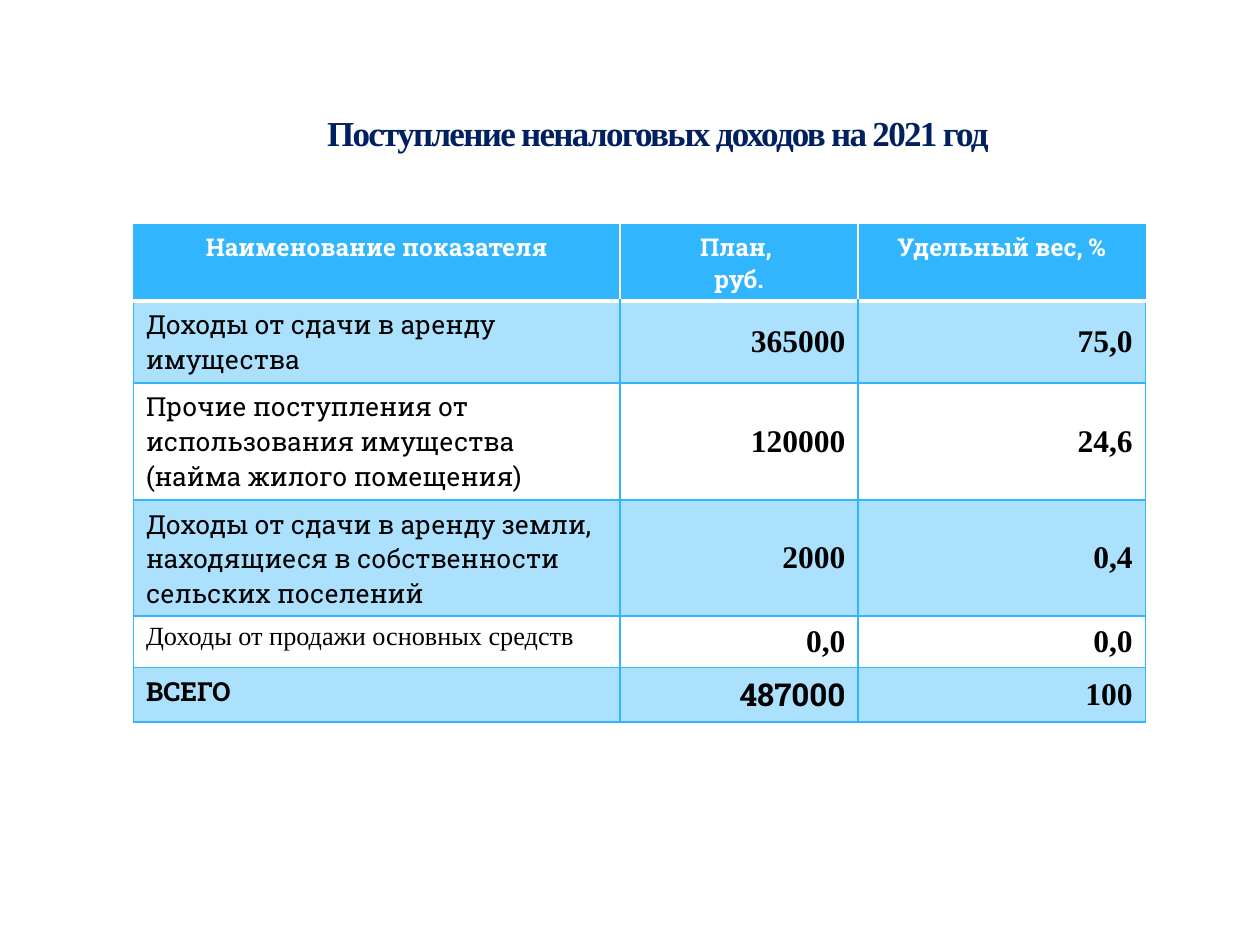
from lxml.etree import SubElement
from pptx import Presentation
from pptx.dml.color import RGBColor
from pptx.enum.text import MSO_ANCHOR, PP_ALIGN
from pptx.oxml.ns import qn
from pptx.util import Inches, Pt

BLUE = RGBColor(0x31, 0xB6, 0xFD)
NAVY = RGBColor(0x00, 0x20, 0x60)
WHITE = RGBColor(0xFF, 0xFF, 0xFF)
BLACK = RGBColor(0x00, 0x00, 0x00)
SLAB, TIMES = "Roboto Slab", "Times New Roman"

COLS = [3.86, 1.89, 2.28]
HEIGHTS = [0.61, 0.65, 0.93, 0.92, 0.41, 0.43]
HEAD = ["Наименование показателя", "План, \nруб.", "Удельный вес, %"]
# Label, plan, share, label font, plan font
ROWS = [
    ("Доходы от сдачи в аренду имущества", "365000", "75,0", SLAB, TIMES),
    ("Прочие поступления от использования имущества (найма жилого помещения)",
     "120000", "24,6", SLAB, TIMES),
    ("Доходы от сдачи в аренду земли, находящиеся в собственности сельских поселений",
     "2000", "0,4", SLAB, TIMES),
    ("Доходы от продажи основных средств", "0,0", "0,0", TIMES, TIMES),
    ("ВСЕГО", "487000", "100", SLAB, SLAB),
]


def write(frame, text, size=15, font=SLAB, color=BLACK, bold=False,
          align=PP_ALIGN.LEFT, space=None):
    """Fill a text frame, one paragraph per line of text."""
    frame.word_wrap = True
    for i, line in enumerate(text.split("\n")):
        para = frame.add_paragraph() if i else frame.paragraphs[0]
        para.alignment = align
        run = para.add_run()
        run.text = line
        run.font.size = Pt(size)
        run.font.name = font
        run.font.bold = bold
        run.font.color.rgb = color
        if space is not None:
            run.font._element.set("spc", str(int(space * 100)))


class Deck:
    def __init__(self):
        self.prs = Presentation()
        self.prs.slide_width = Inches(10)
        self.prs.slide_height = Inches(7.5)
        self.slide = self.prs.slides.add_slide(self.prs.slide_layouts[6])

    def title(self, text, left, top, width, height):
        box = self.slide.shapes.add_textbox(
            Inches(left), Inches(top), Inches(width), Inches(height))
        box.text_frame.vertical_anchor = MSO_ANCHOR.MIDDLE
        write(box.text_frame, text, size=20, font=TIMES, color=NAVY,
              bold=True, align=PP_ALIGN.CENTER, space=-1)

    def table(self, left, top, cols, heights):
        grid = self.slide.shapes.add_table(
            len(heights), len(cols), Inches(left), Inches(top),
            Inches(sum(cols)), Inches(sum(heights))).table
        for col, width in zip(grid.columns, cols):
            col.width = Inches(width)
        for row, height in zip(grid.rows, heights):
            row.height = Inches(height)
        return grid

    def edge(self, cell, side, color=BLUE, width=1):
        props = cell._tc.get_or_add_tcPr()
        line = SubElement(props, qn(f"a:ln{side}"), w=str(Pt(width)))
        fill = SubElement(line, qn("a:solidFill"))
        SubElement(fill, qn("a:srgbClr"), val=str(color))

    def paint(self, cell, color, alpha=None):
        cell.fill.solid()
        cell.fill.fore_color.rgb = color
        if alpha:
            tint = cell._tc.tcPr.find(qn("a:solidFill"))[0]
            SubElement(tint, qn("a:alpha"), val=str(alpha * 1000))

    def head(self, grid, texts):
        for i, text in enumerate(texts):
            cell = grid.cell(0, i)
            if i == 0:
                self.edge(cell, "L")
            if i == len(texts) - 1:
                self.edge(cell, "R")
            self.edge(cell, "T")
            self.edge(cell, "B", WHITE, 3)
            self.paint(cell, BLUE)
            write(cell.text_frame, text, size=14, color=WHITE, bold=True,
                  align=PP_ALIGN.CENTER)

    def body(self, grid, rows):
        for r, (label, plan, share, face, digit) in enumerate(rows, 1):
            fonts = (face, digit, TIMES)
            for c, (text, font) in enumerate(zip((label, plan, share), fonts)):
                cell = grid.cell(r, c)
                for side in "LRTB":
                    if side == "T" and r == 1:
                        self.edge(cell, side, WHITE, 3)
                    else:
                        self.edge(cell, side)
                if r % 2:
                    self.paint(cell, BLUE, alpha=40)
                else:
                    cell.fill.background()
                if c:
                    cell.vertical_anchor = MSO_ANCHOR.MIDDLE
                    write(cell.text_frame, text, size=18, font=font,
                          bold=True, align=PP_ALIGN.RIGHT)
                else:
                    write(cell.text_frame, text, font=font,
                          bold=r == len(rows))


def main():
    deck = Deck()
    # Title
    deck.title("Поступление неналоговых доходов на 2021 год",
               1.38, 0.68, 7.68, 0.74)
    # Income table
    grid = deck.table(1.06, 1.78, COLS, HEIGHTS)
    deck.head(grid, HEAD)
    deck.body(grid, ROWS)
    deck.prs.save("out.pptx")


if __name__ == "__main__":
    main()
